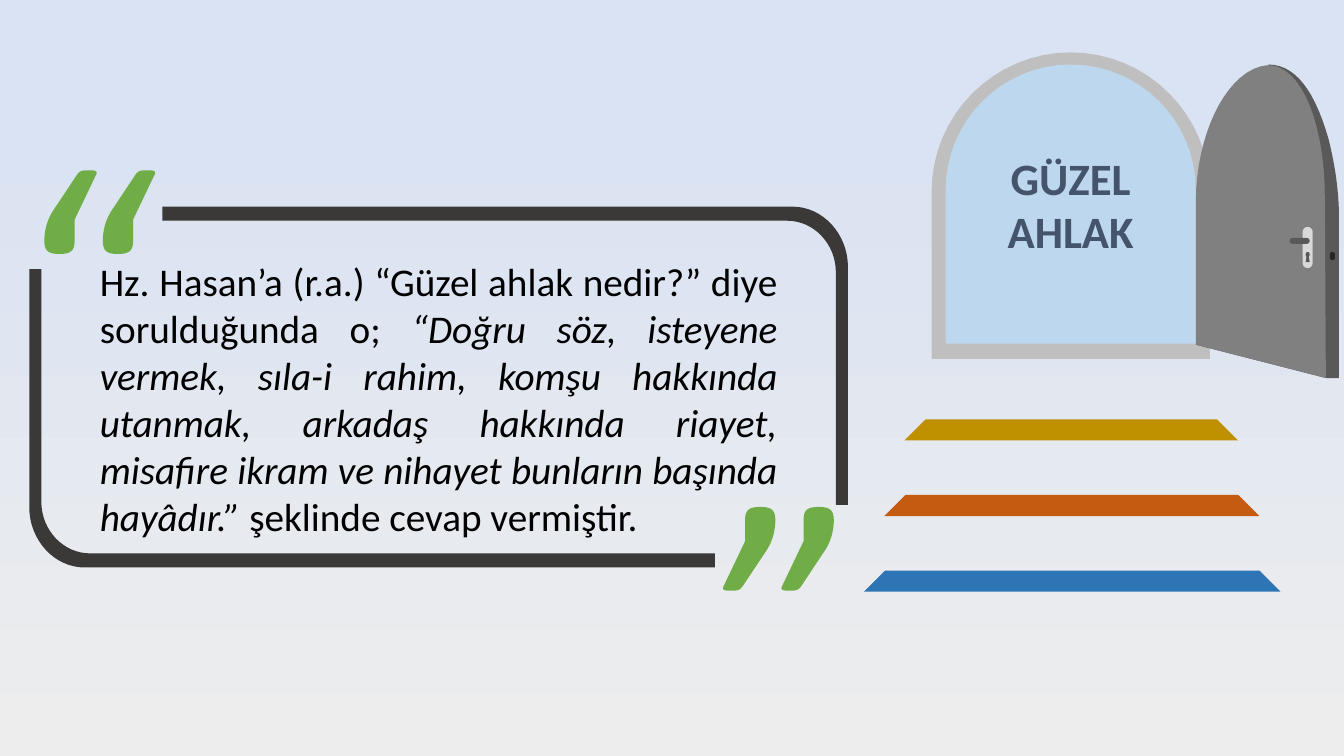
from pptx import Presentation
from pptx.dml.color import RGBColor
from pptx.enum.shapes import MSO_SHAPE
from pptx.enum.text import MSO_ANCHOR, PP_ALIGN
from pptx.util import Emu, Pt

PILL, STEP = MSO_SHAPE.ROUNDED_RECTANGLE, MSO_SHAPE.TRAPEZOID
TOP, MIDDLE = MSO_ANCHOR.TOP, MSO_ANCHOR.MIDDLE
JUSTIFY, CENTER = PP_ALIGN.JUSTIFY, PP_ALIGN.CENTER
PX = 9144  # 100 px to the inch
CURVE_STEPS = 16


class Theme:
    font = "Calibri"
    quote_size, label_size = 28, 32
    text, label = "000000", "44546A"
    background = ((0, "EDEDED"), (0.84, "DAE3F3"))
    bracket, mark = "3B3838", "70AD47"
    wall, opening = "BFBFBF", "BDD7EE"
    door, door_edge = "808080", "595959"
    plate, metal, latch = "D9D9D9", "595959", "262626"
    steps = ("BF9000", "C55A11", "2E75B6")


QUOTE = (
    ("Hz. Hasan’a (r.a.) “Güzel ahlak nedir?” diye sorulduğunda o; ", False),
    ("“Doğru söz, isteyene vermek, sıla-i rahim, komşu hakkında utanmak, "
     "arkadaş hakkında riayet, misafire ikram ve nihayet bunların başında "
     "hayâdır.”", True),
    (" şeklinde cevap vermiştir.", False),
)
LABEL = ("GÜZEL", "AHLAK")

# Outlines: a pair is a corner, six numbers are a Bézier curve
BRACKET = [(0, 62), (12, 62), (12, 293), (12, 321, 34, 344, 60, 344),
           (680, 344), (680, 358), (55, 358), (25, 358, 0, 331, 0, 298)]
MARK = [(44, 0), (49, 0, 54, 0, 51, 5), (30, 49), (30, 70),
        (30, 80, 26, 83, 15, 83), (4, 83, 0, 80, 0, 70),
        (0, 59, 3, 48, 10, 38), (32, 5), (35, 0, 38, 0, 44, 0)]
DOOR_EDGE = [(0, 278), (129, 311), (142, 311), (142, 151),
             (142, 125, 138, 100, 132, 75), (122, 40, 105, 0, 72, 0)]
DOOR_PANEL = [(64, 2), (28, 12, 0, 72, 0, 137), (0, 278), (129, 311),
              (128, 132), (128, 50, 99, -9, 64, 2)]


def turned(outline, w, h):
    """Turn an outline by 180° inside its box."""
    return [tuple((h if i % 2 else w) - v for i, v in enumerate(part))
            for part in outline]


def moved(outline, dx):
    return [tuple(v + (0 if i % 2 else dx) for i, v in enumerate(part))
            for part in outline]


def arch(w, h):
    r = w / 2
    k = 0.45 * r
    return [(0, h), (0, r), (0, k, k, 0, r, 0), (w - k, 0, w, k, w, r), (w, h)]


def flatten(outline, x, y):
    """Turn corners and curves into points in EMU."""
    points = []
    for part in outline:
        if len(part) == 2:
            points.append(part)
            continue
        p0 = points[-1]
        x1, y1, x2, y2, x3, y3 = part
        for i in range(1, CURVE_STEPS + 1):
            t = i / CURVE_STEPS
            u = 1 - t
            a, b, c, d = u ** 3, 3 * u * u * t, 3 * u * t * t, t ** 3
            points.append((a * p0[0] + b * x1 + c * x2 + d * x3,
                           a * p0[1] + b * y1 + c * y2 + d * y3))
    return [((x + px) * PX, (y + py) * PX) for px, py in points]


def paint(sp, color):
    sp.shadow.inherit = False
    sp.fill.solid()
    sp.fill.fore_color.rgb = RGBColor.from_string(color)
    sp.line.fill.background()
    return sp


def add_outline(shapes, x, y, outlines, color):
    first, *others = [flatten(outline, x, y) for outline in outlines]
    builder = shapes.build_freeform(*first[0], scale=1.0)
    builder.add_line_segments(first[1:])
    for points in others:
        builder.move_to(*points[0])
        builder.add_line_segments(points[1:])
    return paint(builder.convert_to_shape(), color)


def add_preset(shapes, kind, box, adjust, color):
    sp = shapes.add_shape(kind, *(Emu(v * PX) for v in box))
    sp.adjustments[0] = adjust
    return paint(sp, color)


def set_frame(tf, anchor, insets):
    sides = ("margin_left", "margin_top", "margin_right", "margin_bottom")
    values = dict(zip(sides, (Emu(v * PX) for v in insets)))
    for name, value in {**values, "word_wrap": True,
                        "vertical_anchor": anchor}.items():
        setattr(tf, name, value)


def add_run(p, text, size, color, **style):
    r = p.add_run()
    r.text = text
    for name, value in {"name": Theme.font, "size": Pt(size), **style}.items():
        setattr(r.font, name, value)
    r.font.color.rgb = RGBColor.from_string(color)


def set_background(slide):
    fill = slide.background.fill
    fill.gradient()
    fill.gradient_angle = 90
    for stop, (position, color) in zip(fill.gradient_stops, Theme.background):
        stop.position = position
        stop.color.rgb = RGBColor.from_string(color)


def add_quote(shapes, x, y, w, h):
    # Bracket with the quotation
    sp = add_outline(shapes, x, y, [BRACKET, turned(BRACKET, w, h)],
                     Theme.bracket)
    tf = sp.text_frame
    set_frame(tf, TOP, (70, 50, 70, 5))
    p = tf.paragraphs[0]
    p.alignment = JUSTIFY
    for text, italic in QUOTE:
        add_run(p, text, Theme.quote_size, Theme.text, italic=italic)

    # Quotation marks at opposite corners
    opening = [moved(MARK, 58), MARK]
    closing = [turned(mark, 110, 83) for mark in opening]
    add_outline(shapes, x + 15, y - 36, opening, Theme.mark)
    add_outline(shapes, x + w - 124, y + h - 60, closing, Theme.mark)


def add_steps(shapes, x, y, w):
    for i, color in enumerate(Theme.steps):
        box = (x - 20 * i, y + 75 * i, w + 41 * i, 21)
        add_preset(shapes, STEP, box, 1, color)


def add_doorway(shapes, x, y, w, h):
    # Wall arch and labelled opening
    add_outline(shapes, x, y, [arch(w, h)], Theme.wall)
    sp = add_outline(shapes, x + 14, y + 12, [arch(w - 28, h - 27)],
                     Theme.opening)
    tf = sp.text_frame
    set_frame(tf, MIDDLE, (4, 4, 4, 4))
    for i, word in enumerate(LABEL):
        p = tf.add_paragraph() if i else tf.paragraphs[0]
        p.alignment = CENTER
        add_run(p, word, Theme.label_size, Theme.label, bold=True)

    # Open door, hinged on the right of the opening
    left, top = x + w - 14, y + 12
    add_outline(shapes, left, top, [DOOR_EDGE], Theme.door_edge)
    add_outline(shapes, left, top, [DOOR_PANEL], Theme.door)

    # Plate, handle, keyhole and latch
    for dx, dy, bw, bh, color in ((106, 161, 10, 41, Theme.plate),
                                  (93, 172, 20, 6, Theme.metal),
                                  (109, 186, 4, 5, Theme.metal),
                                  (133, 186, 5, 8, Theme.latch)):
        add_preset(shapes, PILL, (left + dx, top + dy, bw, bh), 0.5, color)
    add_preset(shapes, STEP, (left + 109, top + 190, 4, 6), 0.25, Theme.metal)


def main():
    prs = Presentation()
    prs.slide_width, prs.slide_height = Emu(1333 * PX), Emu(750 * PX)
    slide = prs.slides.add_slide(prs.slide_layouts[6])
    set_background(slide)
    add_quote(slide.shapes, 29, 205, 812, 358)
    entrance = slide.shapes.add_group_shape().shapes
    add_steps(entrance, 897, 416, 331)
    add_doorway(entrance, 924, 52, 276, 304)
    prs.save("out.pptx")


if __name__ == "__main__":
    main()
